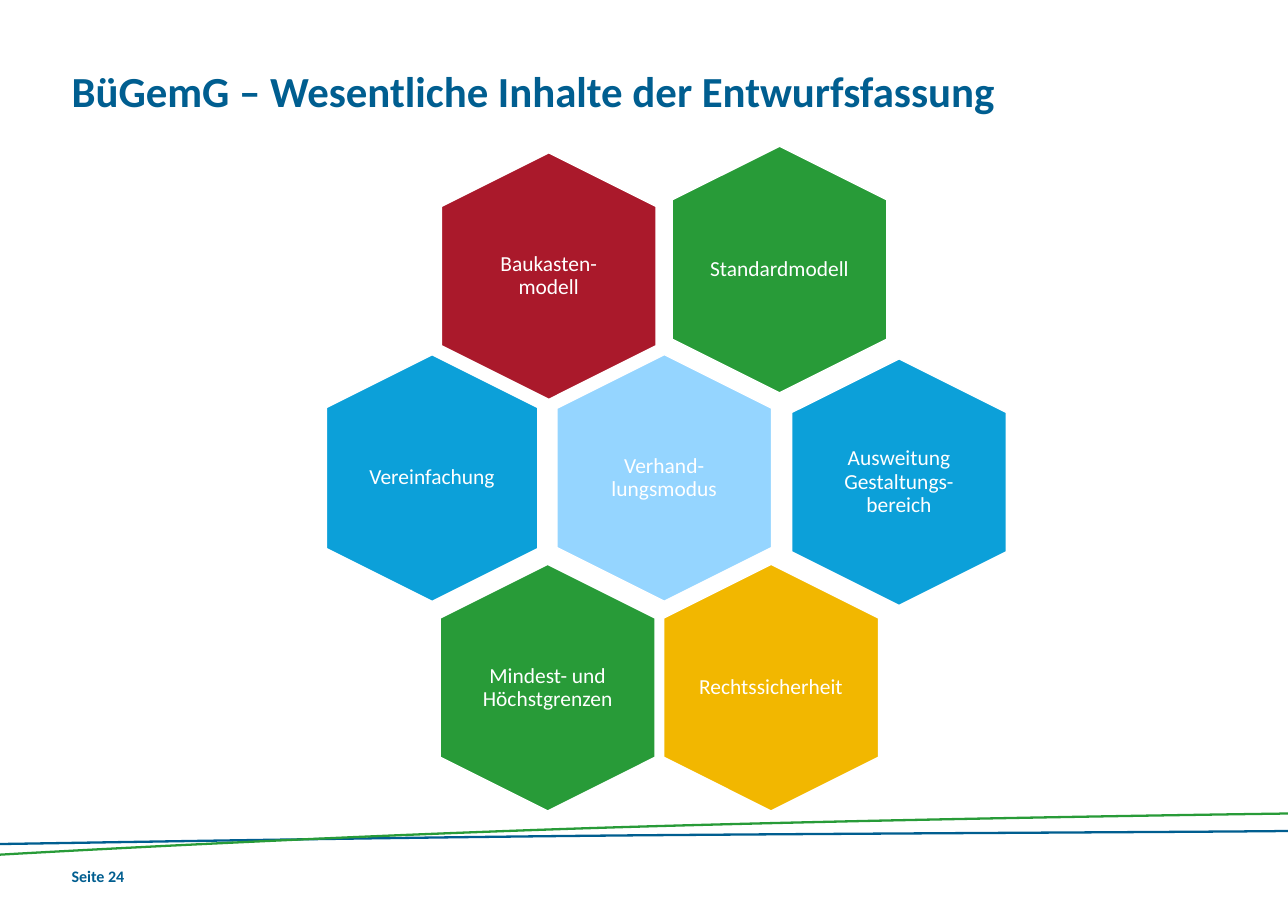
import pptx
import pptx.util
import pptx.dml.color
import pptx.enum.shapes
import pptx.enum.text
import pptx.oxml
import pptx.oxml.ns

Pt = pptx.util.Pt
ANCHOR = pptx.enum.text.MSO_ANCHOR
ALIGN = pptx.enum.text.PP_ALIGN

COLORS = {
    "navy": "005E90",
    "green": "289B38",
    "red": "AA192B",
    "blue": "0CA0D9",
    "sky": "95D5FF",
    "yellow": "F2B700",
    "white": "FFFFFF",
}
FONT = "Calibri"
SLIDE_W, SLIDE_H = 841.68, 595.44
TITLE = "BüGemG – Wesentliche Inhalte der Entwurfsfassung"
PAGE = "Seite 24"

HEX_H, HEX_W = 161.3, 140.4
LABEL_W, LABEL_H = 96.5, 110.9
TOPICS = [
    ("Ausweitung Gestaltungs-bereich", "blue", 587.5, 315.2, HEX_W),
    ("Standardmodell", "green", 509.4, 176.2, HEX_W),
    ("Baukasten-modell", "red", 358.6, 180.5, HEX_W),
    ("Rechtssicherheit", "yellow", 503.9, 449.5, HEX_W),
    ("Verhand-lungsmodus", "sky", 434.1, 312.4, HEX_W),
    ("Vereinfachung", "blue", 282.4, 312.5, 138.2),
    ("Mindest- und Höchstgrenzen", "green", 357.9, 449.5, HEX_W),
]

WAVE_X = (0, 50.4, 245.5, 420.5, 594, 791.3, SLIDE_W)
WAVES = [
    ("navy", (550.9, 550.2, 546.7, 545.2, 543.8, 543, 542.4)),
    ("green", (557.9, 555, 544.5, 539.5, 534.5, 531.7, 531)),
]
WAVE_THICKNESS = 1.5


def rgb(name):
    return pptx.dml.color.RGBColor.from_string(COLORS[name])


def paint(shape, fill):
    shape.shadow.inherit = False
    shape.fill.solid()
    shape.fill.fore_color.rgb = rgb(fill)


def write(frame, text, size, color, bold=False, anchor=ANCHOR.TOP, align=ALIGN.LEFT):
    frame.margin_left = frame.margin_right = 0
    frame.margin_top = frame.margin_bottom = 0
    frame.word_wrap = True
    frame.auto_size = pptx.enum.text.MSO_AUTO_SIZE.NONE
    frame.vertical_anchor = anchor
    paragraph = frame.paragraphs[0]
    paragraph.alignment = align
    run = paragraph.add_run()
    run.text = text
    run.font.name = FONT
    run.font.size = Pt(size)
    run.font.bold = bold
    run.font.color.rgb = rgb(color)
    return paragraph


def bend(wave):
    sides = list(wave._element.iter(pptx.oxml.ns.qn("a:lnTo")))
    edge = len(WAVE_X) - 1
    for first in (0, 3, edge + 1, edge + 4):
        curve = pptx.oxml.parse_xml(
            "<a:cubicBezTo %s/>" % pptx.oxml.ns.nsdecls("a"))
        sides[first].addprevious(curve)
        for side in sides[first:first + 3]:
            curve.append(side[0])
            side.getparent().remove(side)


def add_wave(slide, color, heights):
    upper = list(zip(WAVE_X, heights))
    lower = [(x, y + WAVE_THICKNESS) for x, y in reversed(upper)]
    outline = [(Pt(x), Pt(y)) for x, y in upper + lower]
    builder = slide.shapes.build_freeform(*outline[0])
    builder.add_line_segments(outline[1:], close=False)
    wave = builder.convert_to_shape()
    bend(wave)
    paint(wave, color)
    wave.line.fill.background()


def add_topic(slide, text, color, center_x, center_y, width):
    hexagon = slide.shapes.add_shape(
        pptx.enum.shapes.MSO_SHAPE.HEXAGON,
        Pt(center_x - HEX_H / 2), Pt(center_y - width / 2), Pt(HEX_H), Pt(width))
    hexagon.rotation = 90
    hexagon.adjustments[0] = 0.25
    hexagon.adjustments[1] = 1.155
    paint(hexagon, color)
    hexagon.line.color.rgb = rgb("white")
    hexagon.line.width = Pt(1)
    label = slide.shapes.add_textbox(
        Pt(center_x - LABEL_W / 2), Pt(center_y - LABEL_H / 2), Pt(LABEL_W), Pt(LABEL_H))
    paragraph = write(label.text_frame, text, 14, "white",
                      anchor=ANCHOR.MIDDLE, align=ALIGN.CENTER)
    paragraph.line_spacing = 0.9


def main():
    deck = pptx.Presentation()
    deck.slide_width, deck.slide_height = Pt(SLIDE_W), Pt(SLIDE_H)
    slide = deck.slides.add_slide(deck.slide_layouts[5])

    title = slide.shapes.title
    title.left, title.top, title.width, title.height = Pt(46.8), Pt(42.5), Pt(623.5), Pt(76.3)
    write(title.text_frame, TITLE, 28, "navy", bold=True)

    page = slide.shapes.add_textbox(Pt(46.8), Pt(566.4), Pt(51.1), Pt(18))
    write(page.text_frame, PAGE, 10.5, "navy", bold=True)

    for color, heights in WAVES:
        add_wave(slide, color, heights)
    for topic in TOPICS:
        add_topic(slide, *topic)

    deck.save("out.pptx")


if __name__ == "__main__":
    main()
